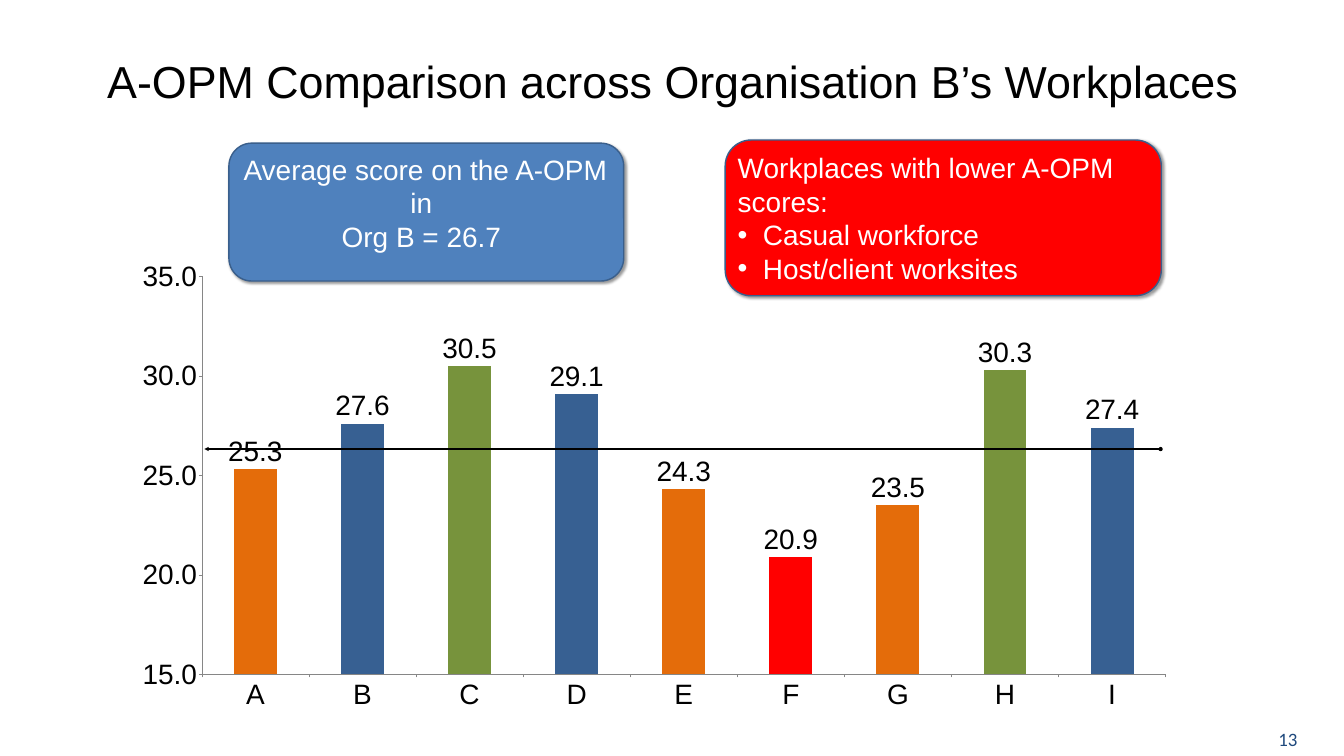
from dataclasses import dataclass

from lxml.etree import SubElement
from pptx import Presentation
from pptx.chart.data import CategoryChartData
from pptx.dml.color import RGBColor
from pptx.enum.chart import XL_CHART_TYPE, XL_LABEL_POSITION, XL_TICK_MARK
from pptx.enum.shapes import MSO_CONNECTOR, MSO_SHAPE
from pptx.enum.text import MSO_ANCHOR, MSO_AUTO_SIZE, PP_ALIGN
from pptx.oxml.ns import qn
from pptx.util import Pt


@dataclass(frozen=True)
class Theme:
    font: str = "Arial"
    number_font: str = "Calibri"
    title_size: float = 64
    body_size: float = 40
    number_size: float = 27
    ink: str = "000000"
    paper: str = "FFFFFF"
    number: str = "1F497D"
    callout: str = "4F81BD"
    callout_edge: str = "3A5F8C"
    axis: str = "868686"
    alert: str = "FF0000"
    low: str = "E46C0A"
    middle: str = "376092"
    high: str = "77933C"


@dataclass(frozen=True)
class Box:
    left: float
    top: float
    width: float
    height: float

    def lengths(self):
        return Pt(self.left), Pt(self.top), Pt(self.width), Pt(self.height)


@dataclass(frozen=True)
class Line:
    text: str
    bulleted: bool = False


@dataclass(frozen=True)
class Workplace:
    label: str
    score: float


THEME = Theme()
WORKPLACES = [
    Workplace(label, score)
    for label, score in zip("ABCDEFGHI", (25.3, 27.6, 30.5, 29.1, 24.3, 20.9, 23.5, 30.3, 27.4))
]


def score_color(score: float) -> str:
    if score < 22:
        return THEME.alert
    if score < 26:
        return THEME.low
    return THEME.middle if score < 30 else THEME.high


def style_font(font, size: float, color: str, name: str = THEME.font) -> None:
    font.size = Pt(size)
    font.name = name
    font.bold = False
    font.color.rgb = RGBColor.from_string(color)


def write(frame, lines: list[Line], size: float, color: str,
          name: str = THEME.font, align=PP_ALIGN.LEFT) -> None:
    frame.word_wrap = True
    for index, line in enumerate(lines):
        paragraph = frame.paragraphs[0] if index == 0 else frame.add_paragraph()
        paragraph.alignment = align
        run = paragraph.add_run()
        run.text = line.text
        style_font(run.font, size, color, name)
        if line.bulleted:
            properties = paragraph._p.get_or_add_pPr()
            properties.set("marL", str(Pt(36)))
            properties.set("indent", str(-Pt(36)))
            SubElement(properties, qn("a:buFont"), typeface=THEME.font)
            SubElement(properties, qn("a:buChar"), char="•")


def pad(frame, across: float, down: float) -> None:
    frame.margin_left = frame.margin_right = Pt(across)
    frame.margin_top = frame.margin_bottom = Pt(down)


def add_callout(slide, box: Box, fill: str):
    callout = slide.shapes.add_shape(MSO_SHAPE.ROUNDED_RECTANGLE, *box.lengths())
    callout.fill.solid()
    callout.fill.fore_color.rgb = RGBColor.from_string(fill)
    callout.line.color.rgb = RGBColor.from_string(THEME.callout_edge)
    callout.line.width = Pt(2)
    callout.shadow.inherit = False
    effects = callout._element.spPr.find(qn("a:effectLst"))
    shadow = SubElement(effects, qn("a:outerShdw"), blurRad=str(Pt(4)), dist=str(Pt(3)),
                        dir=str(45 * 60000), algn="tl", rotWithShape="0")
    shade = SubElement(shadow, qn("a:srgbClr"), val=THEME.ink)
    SubElement(shade, qn("a:alpha"), val="40000")
    return callout


def add_title(slide, box: Box, text: str) -> None:
    title = slide.shapes.title
    title.left, title.top, title.width, title.height = box.lengths()
    frame = title.text_frame
    pad(frame, 19.2, 9.6)
    frame.vertical_anchor = MSO_ANCHOR.TOP
    write(frame, [Line(text)], THEME.title_size, THEME.ink)
    frame.auto_size = MSO_AUTO_SIZE.SHAPE_TO_FIT_TEXT


def set_plot_area(chart, **fractions: float) -> None:
    plot_area = chart._chartSpace.chart.plotArea
    layout = plot_area.find(qn("c:layout"))
    if layout is None:
        layout = plot_area.makeelement(qn("c:layout"))
        plot_area.insert(0, layout)
    manual = SubElement(layout, qn("c:manualLayout"))
    SubElement(manual, qn("c:layoutTarget"), val="inner")
    for side in "xy":
        SubElement(manual, qn(f"c:{side}Mode"), val="edge")
    for side, fraction in fractions.items():
        SubElement(manual, qn(f"c:{side}"), val=str(fraction))


def add_score_chart(slide, box: Box) -> None:
    scores = CategoryChartData(number_format="0.0")
    scores.categories = [workplace.label for workplace in WORKPLACES]
    scores.add_series("Series 1", [workplace.score for workplace in WORKPLACES])
    chart = slide.shapes.add_chart(XL_CHART_TYPE.COLUMN_CLUSTERED, *box.lengths(), scores).chart
    chart.has_legend = False
    chart.has_title = False
    style_font(chart.font, THEME.body_size, THEME.ink)
    set_plot_area(chart, x=0.075, y=0.05, w=0.9, h=0.85)

    for axis in (chart.category_axis, chart.value_axis):
        axis.has_major_gridlines = False
        axis.major_tick_mark = XL_TICK_MARK.OUTSIDE
        axis.format.line.color.rgb = RGBColor.from_string(THEME.axis)
        style_font(axis.tick_labels.font, THEME.body_size, THEME.ink)
    scale = chart.value_axis
    scale.minimum_scale, scale.maximum_scale, scale.major_unit = 15, 35, 5
    scale.tick_labels.number_format = "0.0"
    scale.tick_labels.number_format_is_linked = False

    plot = chart.plots[0]
    plot.gap_width = 150
    plot.vary_by_categories = False
    series = plot.series[0]
    series.format.fill.solid()
    series.format.fill.fore_color.rgb = RGBColor.from_string(THEME.middle)
    for index, workplace in enumerate(WORKPLACES):
        color = score_color(workplace.score)
        if color != THEME.middle:
            fill = series.points[index].format.fill
            fill.solid()
            fill.fore_color.rgb = RGBColor.from_string(color)
    labels = series.data_labels
    labels.show_value = True
    labels.position = XL_LABEL_POSITION.OUTSIDE_END
    labels.number_format = "0.0"
    labels.number_format_is_linked = False
    style_font(labels.font, THEME.body_size, THEME.ink)


def add_average_line(slide, left: float, right: float, height: float) -> None:
    average = slide.shapes.add_connector(
        MSO_CONNECTOR.STRAIGHT, Pt(right), Pt(height), Pt(left), Pt(height))
    average.line.color.rgb = RGBColor.from_string(THEME.ink)
    average.line.width = Pt(2)
    stroke = average.line._get_or_add_ln()
    SubElement(stroke, qn("a:headEnd"), type="oval")
    SubElement(stroke, qn("a:tailEnd"), type="triangle")
    SubElement(average._element.spPr, qn("a:effectLst"))


def main() -> None:
    deck = Presentation()
    deck.slide_width, deck.slide_height = Pt(1920), Pt(1080)
    slide = deck.slides.add_slide(deck.slide_layouts[5])

    add_score_chart(slide, Box(173.5, 361.5, 1530, 669))
    add_average_line(slide, 292, 1658, 641.5)
    add_title(slide, Box(134, 67, 1748, 97), "A-OPM Comparison across Organisation B’s Workplaces")

    add_callout(slide, Box(327, 204.5, 564, 197), THEME.callout)
    average_note = slide.shapes.add_textbox(*Box(339, 214, 537, 152.5).lengths()).text_frame
    write(average_note, [Line("Average score on the A-OPM in "), Line("Org B = 26.7 ")],
          THEME.body_size, THEME.paper, align=PP_ALIGN.CENTER)
    average_note.auto_size = MSO_AUTO_SIZE.SHAPE_TO_FIT_TEXT

    page_number = slide.shapes.add_textbox(*Box(1807, 1030, 76, 50).lengths()).text_frame
    pad(page_number, 19.2, 9.6)
    write(page_number, [Line("13")], THEME.number_size, THEME.number, THEME.number_font)

    low_scores = add_callout(slide, Box(1036, 200, 623, 222.5), THEME.alert).text_frame
    low_scores.vertical_anchor = MSO_ANCHOR.MIDDLE
    write(low_scores, [Line("Workplaces with lower A-OPM scores:"),
                       Line("Casual workforce", True), Line("Host/client worksites", True)],
          THEME.body_size, THEME.paper)
    low_scores.auto_size = MSO_AUTO_SIZE.SHAPE_TO_FIT_TEXT

    deck.save("out.pptx")


if __name__ == "__main__":
    main()
